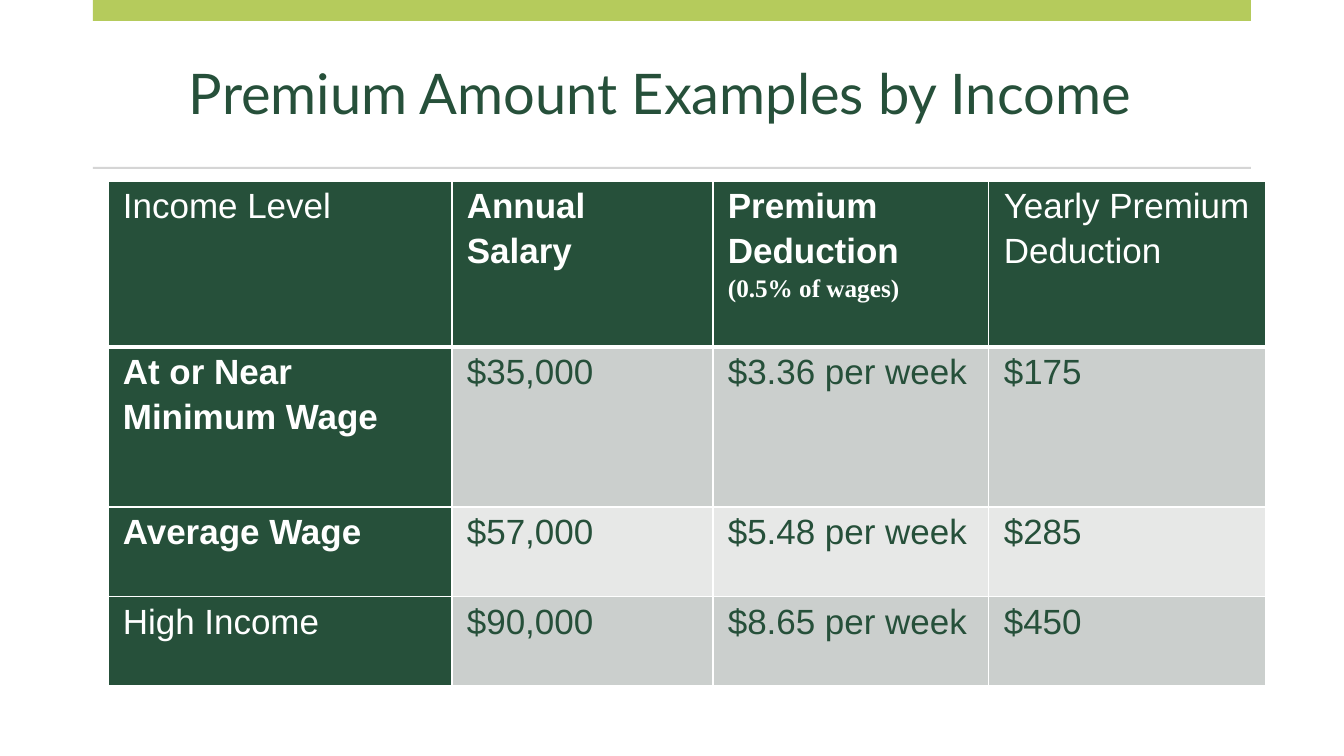
from pptx import Presentation
from pptx.dml.color import RGBColor
from pptx.enum.shapes import MSO_SHAPE
from pptx.enum.text import MSO_ANCHOR, PP_ALIGN
from pptx.oxml import parse_xml
from pptx.oxml.ns import nsdecls
from pptx.util import Pt

RECT = MSO_SHAPE.RECTANGLE
MIDDLE = MSO_ANCHOR.MIDDLE
LEFT = PP_ALIGN.LEFT
PX = 914400 / 100.8
HEX = {"green": "26503A", "lime": "B5CB5C", "rule": "D5D5D5",
       "white": "FFFFFF", "dark": "CBCFCD", "light": "E7E8E7"}
COLOR = {name: RGBColor.from_string(code) for name, code in HEX.items()}


def px(*sizes):
    return [round(size * PX) for size in sizes]


def add_run(para, text, font, size, color, bold=False):
    run = para.add_run()
    run.text = text
    run.font.name = font
    run.font.size = Pt(size)
    run.font.bold = bold
    run.font.color.rgb = COLOR[color]


deck = Presentation()
deck.slide_width, deck.slide_height = px(1344, 756)
slide = deck.slides.add_slide(deck.slide_layouts[5])

# Title
title = slide.shapes.title
title.left, title.top, title.width, title.height = px(93, 37, 1158, 119)
frame = title.text_frame
frame.word_wrap = True
frame.vertical_anchor = MIDDLE
frame.margin_left, frame.margin_right = px(96, 10)
frame.margin_top, frame.margin_bottom = px(5, 5)
para = frame.paragraphs[0]
para.alignment = LEFT
para.line_spacing = 0.9
add_run(para, "Premium Amount Examples by Income", "Lato", 40, "green")

# Top bar and rule under the title
for top, height, color in [(0, 21, "lime"), (167, 2, "rule")]:
    bar = slide.shapes.add_shape(RECT, *px(93, top, 1158, height))
    bar.shadow.inherit = False
    bar.fill.solid()
    bar.fill.fore_color.rgb = COLOR[color]
    bar.line.fill.background()

# Premium table
rows = [
    ["Income Level", "Annual Salary", "Premium Deduction", "Yearly Premium Deduction"],
    ["At or Near Minimum Wage", "$35,000", "$3.36 per week", "$175"],
    ["Average Wage", "$57,000", "$5.48 per week", "$285"],
    ["High Income", "$90,000", "$8.65 per week", "$450"],
]
bold = {"Annual Salary", "Premium Deduction", "At or Near Minimum Wage", "Average Wage"}
widths = px(344, 261, 276, 277)
heights = px(166, 160, 90, 89)
left, top = px(108, 181)
table = slide.shapes.add_table(4, 4, left, top, sum(widths), sum(heights)).table
for col, width in zip(table.columns, widths):
    col.width = width
for row, height in zip(table.rows, heights):
    row.height = height

for r, row in enumerate(rows):
    for c, text in enumerate(row):
        cell = table.cell(r, c)
        head = r == 0 or c == 0
        cell.margin_left, cell.margin_right = px(15, 15)
        cell.margin_top = cell.margin_bottom = 0
        para = cell.text_frame.paragraphs[0]
        para.line_spacing = 1.15
        add_run(para, text, "Arial", 25, "white" if head else "green", text in bold)
        if text == "Premium Deduction":
            para = cell.text_frame.add_paragraph()
            para.line_spacing = 1.15
            add_run(para, "(0.5% of wages)", "Times New Roman", 18, "white", True)

        props = cell._tc.get_or_add_tcPr()
        for side in "LRTB":
            thick = (r, side) in [(0, "B"), (1, "T")]
            props.append(parse_xml(
                f'<a:ln{side} {nsdecls("a")} w="{Pt(3 if thick else 1)}"><a:solidFill>'
                f'<a:srgbClr val="{HEX["white"]}"/></a:solidFill></a:ln{side}>'))
        cell.fill.solid()
        shade = "green" if head else "dark" if r % 2 else "light"
        cell.fill.fore_color.rgb = COLOR[shade]

deck.save("out.pptx")
